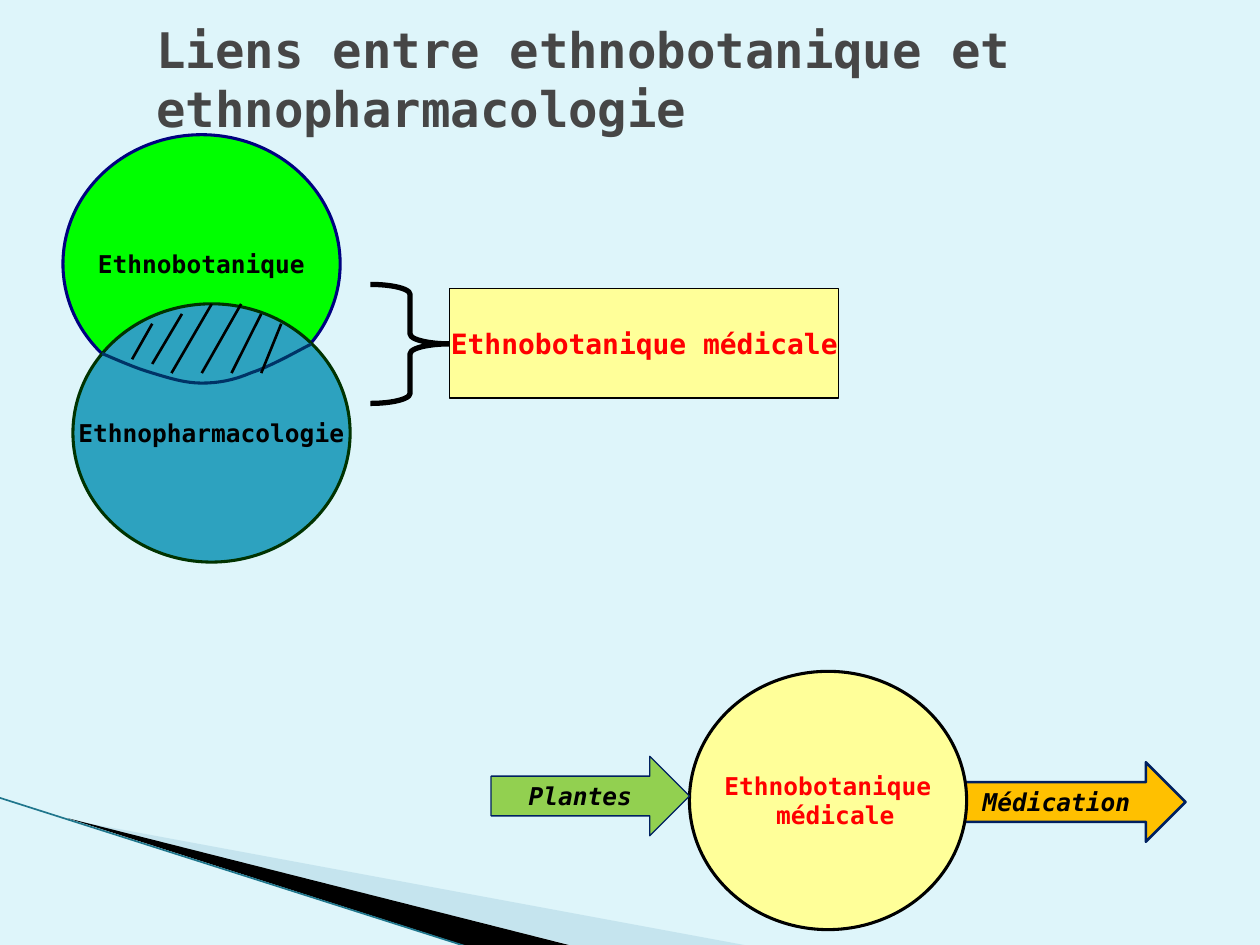
from dataclasses import dataclass, field
from typing import Any

from lxml import etree
from pptx import Presentation
from pptx import util as u
from pptx.dml.color import RGBColor
from pptx.enum import shapes, text
from pptx.oxml.ns import qn

COLOURS = {
    "sky": "DEF5FA", "mist": "A0CBDC", "teal": "1F768C", "black": "000000",
    "grey": "464646", "green": "00FF00", "navy": "000080", "blue": "2DA2BF",
    "forest": "003300", "deep": "003366", "cream": "FFFF99", "red": "FF0000",
    "lime": "92D050", "amber": "FFC000", "ink": "002060",
}
FONT = "DejaVu Sans Mono"
CIRCLE = (158.4, 147.6)
ARROW_HEIGHT = 45.4
KIND = shapes.MSO_SHAPE

Point = tuple[float, float]


@dataclass
class Figure:
    kind: Any
    at: Point
    size: Point
    fill: str | None
    line: str
    weight: float
    words: list[str] = field(default_factory=list)
    font: dict[str, Any] = field(default_factory=dict)
    colour: str = "black"


LABEL = {"size": u.Pt(14), "bold": True}
ARROW_LABEL = {**LABEL, "italic": True}

MEDICATION = Figure(KIND.RIGHT_ARROW, (541.4, 435.6), (136.1, ARROW_HEIGHT),
                    "amber", "ink", 1.5, ["Médication"], ARROW_LABEL)
VENN = [
    Figure(KIND.OVAL, (36, 77), CIRCLE, "green", "navy", 1.75,
           ["Ethnobotanique"], LABEL),
    Figure(KIND.OVAL, (41.7, 173.6), CIRCLE, "blue", "forest", 1.75,
           ["Ethnopharmacologie"], LABEL),
]
RESULTS = [
    Figure(KIND.RIGHT_BRACE, (211.7, 162.5), (45.3, 68), None, "black", 3),
    Figure(KIND.RECTANGLE, (257, 165), (222.4, 62.4), "cream", "black", 0.75,
           ["Ethnobotanique médicale"], {**LABEL, "size": u.Pt(16)}, "red"),
    Figure(KIND.OVAL, (394, 383.6), CIRCLE, "cream", "black", 1.75,
           ["Ethnobotanique", " médicale"], LABEL, "red"),
    Figure(KIND.RIGHT_ARROW, (280.6, 432.2), (113.4, ARROW_HEIGHT),
           "lime", "ink", 0.75, ["Plantes"], ARROW_LABEL),
]
HATCHING = [
    ((87, 185), (75.5, 205.3)), ((87, 208), (104, 179.4)),
    ((98, 213.2), (121, 173.7)), ((115.3, 213.2), (137.8, 173.7)),
    ((132.3, 213.2), (149.3, 179.4)), ((149.3, 213.2), (160.7, 185)),
]
OVERLAP_EDGE = [
    (58.3, 202), (67.7, 205.9), (77, 210.2), (87, 213.1),
    (96.5, 216), (105.8, 218.9), (115.2, 218.9),
    (124.6, 218.9), (133.2, 217.4), (143.3, 213.1),
    (154.1, 209.5), (165.6, 203), (177.8, 196.6),
]
WEDGES = [
    ("mist", 40, [(39.6, 468.5), (428, 540.5), (328, 540.5)]),
    ("black", 100, [(38.5, 467.5), (329, 541), (268, 541)]),
]


def rgb(name: str) -> RGBColor:
    return RGBColor.from_string(COLOURS[name])


def apply(target: Any, values: dict[str, Any]) -> None:
    for name, value in values.items():
        setattr(target, name, value)


def set_line(shape: Any, colour: str, weight: float) -> None:
    shape.line.color.rgb = rgb(colour)
    shape.line.width = u.Pt(weight)


def write(shape: Any, words: list[str], font: dict[str, Any], colour: str,
          align: Any, wrap: bool) -> None:
    frame = shape.text_frame
    apply(frame, {"word_wrap": wrap, "vertical_anchor": text.MSO_ANCHOR.MIDDLE})
    for index, line in enumerate(words):
        para = frame.paragraphs[0] if index == 0 else frame.add_paragraph()
        para.alignment = align
        span = para.add_run()
        span.text = line
        apply(span.font, {"name": FONT, **font})
        span.font.color.rgb = rgb(colour)


def add_figure(page: Any, figure: Figure) -> None:
    shape = page.shapes.add_shape(
        figure.kind, *(u.Pt(v) for v in (*figure.at, *figure.size)))
    shape.shadow.inherit = False
    if figure.fill:
        shape.fill.solid()
        shape.fill.fore_color.rgb = rgb(figure.fill)
    else:
        shape.fill.background()
    if figure.kind == KIND.RIGHT_BRACE:
        shape.adjustments[0] = 0.125
    set_line(shape, figure.line, figure.weight)
    if figure.words:
        write(shape, figure.words, figure.font, figure.colour,
              text.PP_ALIGN.CENTER, False)


def add_line(page: Any, start: Point, end: Point, colour: str, weight: float) -> None:
    line = page.shapes.add_connector(
        shapes.MSO_CONNECTOR.STRAIGHT, *(u.Pt(v) for v in (*start, *end)))
    set_line(line, colour, weight)
    etree.SubElement(line._element.spPr, qn("a:effectLst"))


def add_outline(page: Any, points: list[Point], closed: bool) -> Any:
    corners = [(u.Pt(x), u.Pt(y)) for x, y in points]
    builder = page.shapes.build_freeform(*corners[0])
    builder.add_line_segments(corners[1:], close=closed)
    shape = builder.convert_to_shape()
    shape.shadow.inherit = False
    return shape


def add_wedge(page: Any, colour: str, opacity: int, points: list[Point]) -> None:
    wedge = add_outline(page, points, True)
    wedge.fill.solid()
    wedge.fill.fore_color.rgb = rgb(colour)
    wedge.line.fill.background()
    if opacity < 100:
        tint = wedge._element.spPr.find(".//" + qn("a:srgbClr"))
        etree.SubElement(tint, qn("a:alpha"), val=str(opacity * 1000))


def smooth(knots: list[Point], steps: int = 8) -> list[Point]:
    """Sample a chain of cubic Bézier curves that share their end points."""
    points = [knots[0]]
    for first in range(0, len(knots) - 1, 3):
        controls = knots[first:first + 4]
        for step in range(1, steps + 1):
            t = step / steps
            weights = ((1 - t) ** 3, 3 * t * (1 - t) ** 2, 3 * t * t * (1 - t), t ** 3)
            points.append((sum(w * p[0] for w, p in zip(weights, controls)),
                           sum(w * p[1] for w, p in zip(weights, controls))))
    return points


def main() -> None:
    deck = Presentation()
    apply(deck, {"slide_width": u.Pt(720), "slide_height": u.Pt(540)})
    page = deck.slides.add_slide(deck.slide_layouts[6])
    page.background.fill.solid()
    page.background.fill.fore_color.rgb = rgb("sky")

    for wedge in WEDGES:
        add_wedge(page, *wedge)
    add_line(page, (-0.5, 455.8), (267, 541), "teal", 0.95)

    add_figure(page, MEDICATION)
    title = page.shapes.add_textbox(u.Pt(82.2), u.Pt(0), u.Pt(550), u.Pt(90))
    write(title, ["Liens entre ethnobotanique et ethnopharmacologie"],
          {"size": u.Pt(28), "bold": True}, "grey", text.PP_ALIGN.LEFT, True)

    for circle in VENN:
        add_figure(page, circle)
    edge = add_outline(page, smooth(OVERLAP_EDGE), False)
    edge.fill.background()
    set_line(edge, "deep", 1.75)
    for start, end in HATCHING:
        add_line(page, start, end, "black", 1.5)
    for figure in RESULTS:
        add_figure(page, figure)

    deck.save("out.pptx")


if __name__ == "__main__":
    main()
